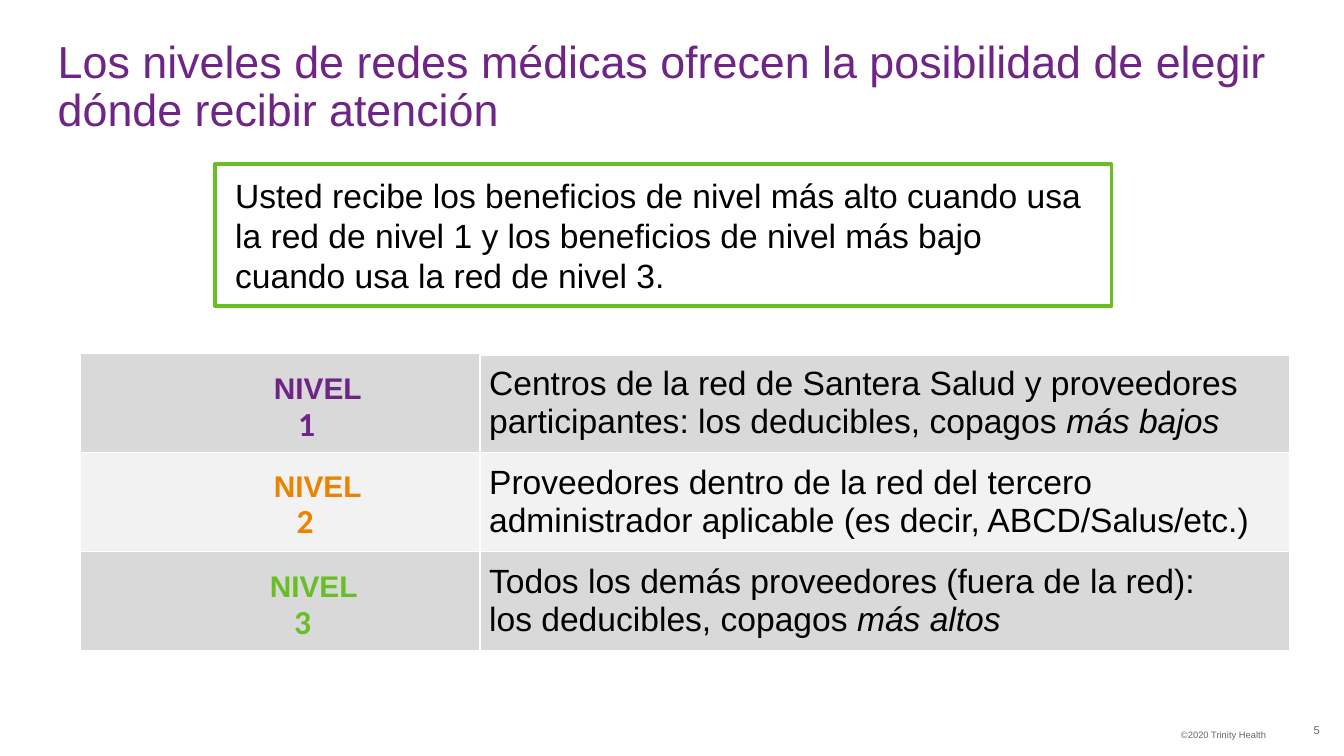
from pptx import Presentation
from pptx.dml.color import RGBColor
from pptx.enum.shapes import MSO_SHAPE
from pptx.enum.text import MSO_ANCHOR, MSO_AUTO_SIZE, PP_ALIGN
from pptx.oxml import parse_xml
from pptx.oxml.ns import nsdecls
from pptx.util import Inches, Pt

PURPLE, ORANGE, GREEN = "6E2585", "E98300", "69BE28"
BLACK, GRAY, WHITE = "000000", "666666", "FFFFFF"
DARK_BAND, LIGHT_BAND = "D9D9D9", "F2F2F2"

# Level number, colour, boxes of its label and number, row fill,
# description lines and closing words in italics
LEVELS = [
    ("1", PURPLE, (1.94, 2.75, 1.51, 0.33), (2.12, 3.03, 0.37, 0.33), DARK_BAND,
     ["Centros de la red de Santera Salud y proveedores participantes: "
      "los deducibles, copagos "], "más bajos"),
    ("2", ORANGE, (1.94, 3.48, 0.86, 0.33), (2.11, 3.75, 0.33, 0.33), LIGHT_BAND,
     ["Proveedores dentro de la red del tercero administrador aplicable "
      "(es decir, ABCD/Salus/etc.)"], ""),
    ("3", GREEN, (1.91, 4.22, 0.86, 0.33), (2.09, 4.5, 0.51, 0.33), DARK_BAND,
     ["Todos los demás proveedores (fuera de la red): ",
      "los deducibles, copagos "], "más altos"),
]


def color(value):
    return RGBColor.from_string(value)


def set_attributes(target, values):
    for name, value in values.items():
        setattr(target, name, value)


def set_margins(target, left, top, right, bottom):
    set_attributes(target, {
        "margin_left": Inches(left), "margin_top": Inches(top),
        "margin_right": Inches(right), "margin_bottom": Inches(bottom)})


def add_run(paragraph, text, size, text_color, **font_values):
    run = paragraph.add_run()
    run.text = text
    set_attributes(run.font, {"name": "Arial", "size": Pt(size), **font_values})
    run.font.color.rgb = color(text_color)


def add_text(slide, box, text, size, text_color, margins=(0.1, 0.05, 0.1, 0.05),
             anchor=MSO_ANCHOR.TOP, wrap=True, paragraph_values=None, **font_values):
    shape = slide.shapes.add_textbox(*map(Inches, box))
    frame = shape.text_frame
    set_attributes(frame, {"word_wrap": wrap, "vertical_anchor": anchor})
    set_margins(frame, *margins)
    paragraph = frame.paragraphs[0]
    set_attributes(paragraph, paragraph_values or {})
    add_run(paragraph, text, size, text_color, **font_values)


def add_callout(slide, box, text):
    shape = slide.shapes.add_shape(MSO_SHAPE.RECTANGLE, *map(Inches, box))
    shape.shadow.inherit = False
    shape.fill.solid()
    shape.fill.fore_color.rgb = color(WHITE)
    shape.line.color.rgb = color(GREEN)
    shape.line.width = Pt(2)
    frame = shape.text_frame
    set_attributes(frame, {"word_wrap": True, "vertical_anchor": MSO_ANCHOR.MIDDLE,
                           "auto_size": MSO_AUTO_SIZE.SHAPE_TO_FIT_TEXT})
    set_margins(frame, 0.15, 0.07, 0.15, 0.07)
    frame.paragraphs[0].alignment = PP_ALIGN.LEFT
    add_run(frame.paragraphs[0], text, 18, BLACK)


def format_cell(cell, fill, borders):
    cell.fill.solid()
    cell.fill.fore_color.rgb = color(fill)
    properties = cell._tc.get_or_add_tcPr()
    for index, (side, width) in enumerate(borders.items()):
        properties.insert(index, parse_xml(
            f'<a:ln{side} {nsdecls("a")} w="{Pt(width)}"><a:solidFill>'
            f'<a:srgbClr val="{WHITE}"/></a:solidFill></a:ln{side}>'))


def add_level_table(slide):
    height, top_height = 2.83, 0.62
    table = slide.shapes.add_table(
        4, 2, Inches(0.6), Inches(2.01), Inches(9), Inches(height)).table
    set_attributes(table, {"first_row": False, "horz_banding": False})
    for column, width in zip(table.columns, (2.97, 6.03)):
        column.width = Inches(width)
    for row in table.rows:
        row.height = Inches((height - top_height) / len(LEVELS))
    table.rows[0].height = Inches(top_height)

    # Blank top row, with a thick rule above the descriptions
    thin = dict.fromkeys("LRTB", 1)
    format_cell(table.cell(0, 0), WHITE, {})
    format_cell(table.cell(0, 1), WHITE, {"R": 1, "T": 1, "B": 3})

    for index, (*_, fill, lines, emphasis) in enumerate(LEVELS, start=1):
        top = 3 if index == 1 else 1
        format_cell(table.cell(index, 0), fill, {"L": 1, "R": 1, "B": 1})
        cell = table.cell(index, 1)
        format_cell(cell, fill, {**thin, "T": top})
        cell.vertical_anchor = MSO_ANCHOR.MIDDLE
        set_margins(cell, 0.07, 0.04, 0.07, 0.04)
        paragraph = cell.text_frame.paragraphs[0]
        for position, line in enumerate(lines):
            if position:
                paragraph.add_line_break()
            add_run(paragraph, line, 18, BLACK)
        if emphasis:
            add_run(paragraph, emphasis, 18, BLACK, italic=True)


def add_level_label(slide, number, text_color, label_box, number_box):
    spacing = {"line_spacing": Pt(15.8), "space_after": Pt(4.5)}
    add_text(slide, label_box, "NIVEL", 16, text_color,
             paragraph_values=spacing, bold=True)
    add_text(slide, number_box, number, 18, text_color,
             paragraph_values=spacing, bold=True, name="Calibri")


def main():
    presentation = Presentation()
    presentation.slide_width = Inches(10)
    presentation.slide_height = Inches(10 * 9 / 16)
    slide = presentation.slides.add_slide(presentation.slide_layouts[6])

    # Level table
    add_level_table(slide)

    # Title
    add_text(slide, (0.43, 0.38, 9, 0.55),
             "Los niveles de redes médicas ofrecen la posibilidad de elegir "
             "dónde recibir atención", 24, PURPLE, margins=(0, 0, 0, 0),
             anchor=MSO_ANCHOR.MIDDLE, paragraph_values={"line_spacing": 0.9})

    # Footer
    right = {"alignment": PP_ALIGN.RIGHT}
    add_text(slide, (5.33, 5.38, 4.19, 0.2), "©2020 Trinity Health", 5, GRAY,
             paragraph_values=right)
    add_text(slide, (9.38, 5.28, 0.44, 0.3), "5", 6, GRAY,
             margins=(0.1, 0.05, 0, 0.05), anchor=MSO_ANCHOR.MIDDLE,
             paragraph_values=right)

    # Key message
    add_callout(slide, (1.6, 1.22, 6.67, 1.06),
                "Usted recibe los beneficios de nivel más alto cuando usa la red de "
                "nivel 1 y los beneficios de nivel más bajo cuando usa la red de "
                "nivel 3.")

    # Level labels
    for number, text_color, label_box, number_box, *_ in LEVELS:
        add_level_label(slide, number, text_color, label_box, number_box)

    presentation.save("out.pptx")


if __name__ == "__main__":
    main()
